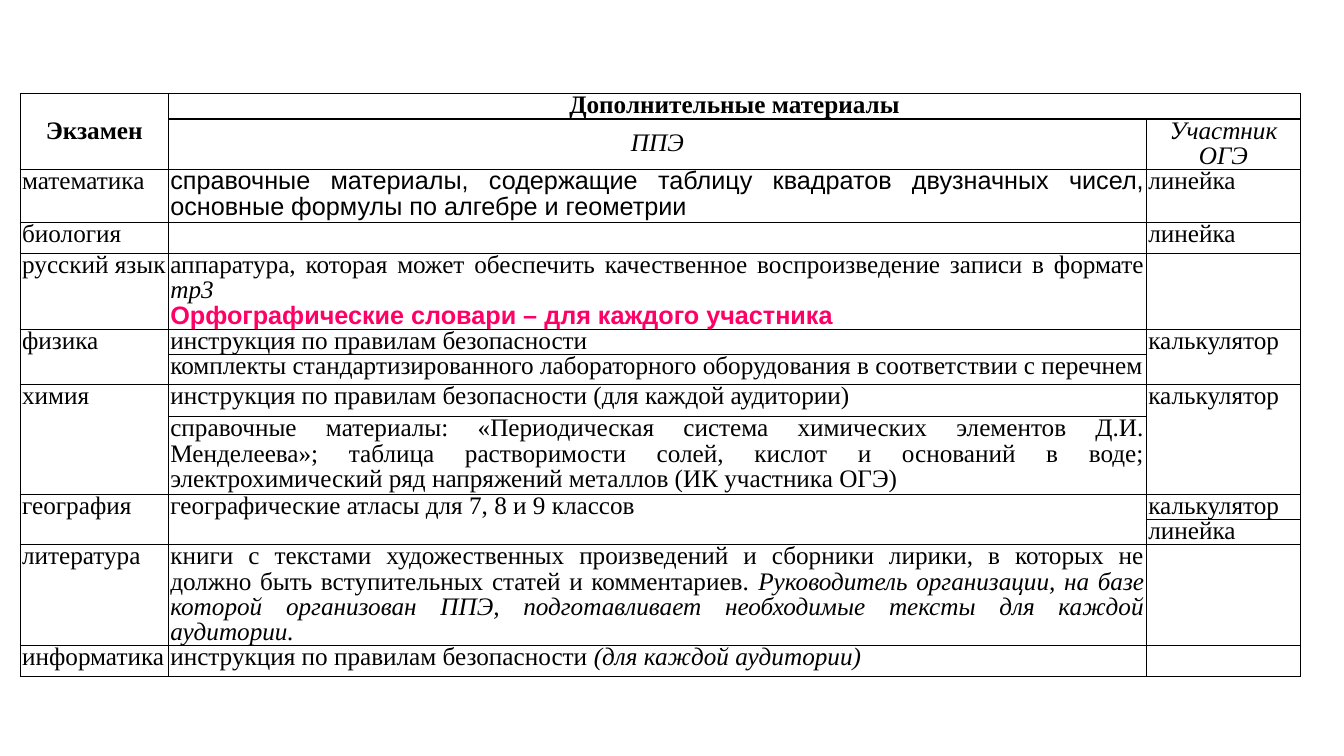
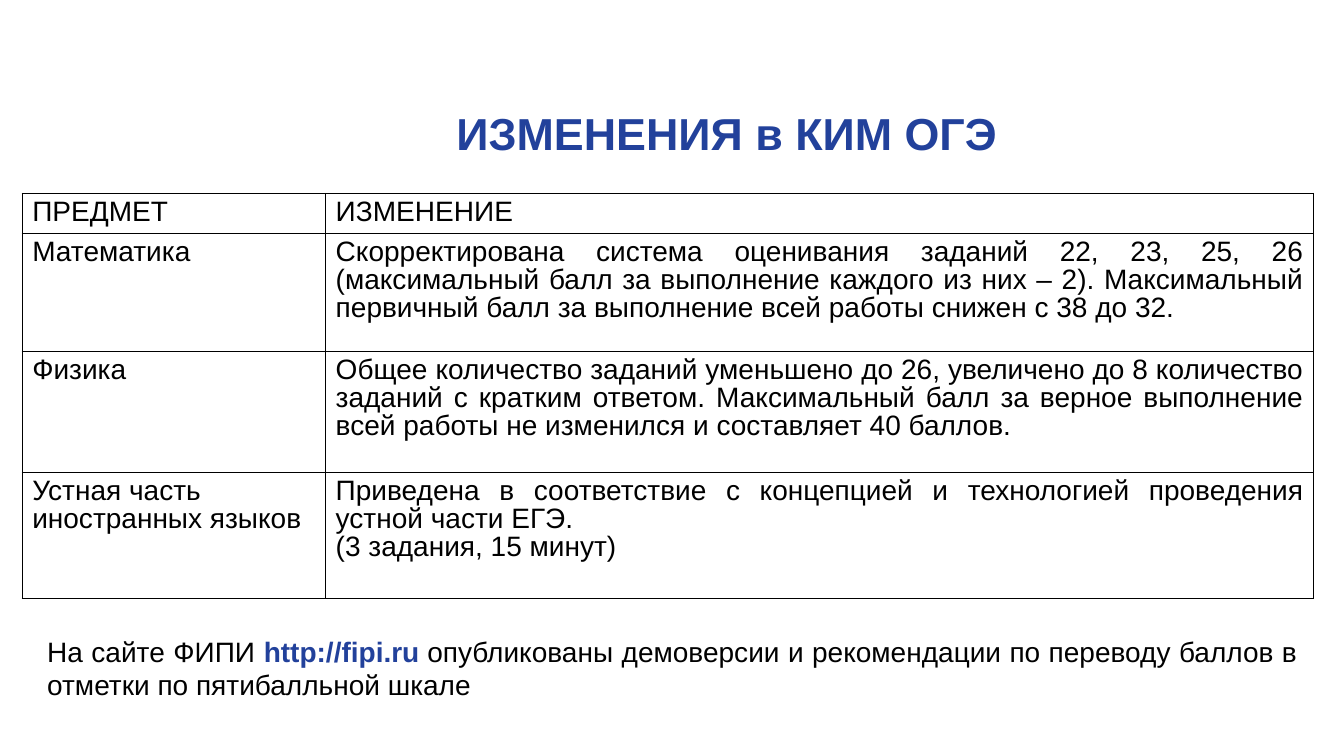
from lxml.etree import SubElement
from pptx import Presentation
from pptx.dml.color import RGBColor
from pptx.enum.text import MSO_ANCHOR, PP_ALIGN
from pptx.oxml.ns import qn
from pptx.util import Inches, Pt

COLORS = {"text": "000000", "accent": "22419B", "alert": "FF0066", "paper": "FFFFFF"}
SERIF = {"name": "Times New Roman", "size": Pt(18)}
SANS = {"name": "Arial", "size": Pt(20)}
TITLE = {"name": "Arial", "size": Pt(32), "bold": True, "color": "accent"}
ITALIC = {"italic": True}
BOLD = {"bold": True}
CENTER, JUSTIFY, LEFT = PP_ALIGN.CENTER, PP_ALIGN.JUSTIFY, PP_ALIGN.LEFT

MATERIALS = [
    ["Экзамен", "Дополнительные материалы", None],
    [None, "ППЭ", "Участник ОГЭ"],
    ["математика",
     [[("справочные материалы, содержащие таблицу квадратов двузначных чисел, "
        "основные формулы по алгебре и геометрии", {"name": "Arial"})]],
     "линейка"],
    ["биология", None, "линейка"],
    ["русский язык",
     [[("аппаратура, которая может обеспечить качественное воспроизведение "
        "записи в формате ", {}), ("mp3", ITALIC)],
      [("Орфографические словари – для каждого участника",
        {"name": "Arial", "bold": True, "color": "alert"})]],
     None],
    ["физика", "инструкция по правилам безопасности", "калькулятор"],
    [None, "комплекты стандартизированного лабораторного оборудования "
           "в соответствии с перечнем", None],
    ["химия", "инструкция по правилам безопасности (для каждой аудитории)",
     "калькулятор"],
    [None, "справочные материалы: «Периодическая система химических элементов "
           "Д.И. Менделеева»; таблица растворимости солей, кислот и оснований "
           "в воде; электрохимический ряд напряжений металлов (ИК участника ОГЭ)",
     None],
    ["география", "географические атласы для 7, 8 и 9 классов", "калькулятор"],
    [None, None, "линейка"],
    ["литература",
     [[("книги с текстами художественных произведений и сборники лирики, "
        "в которых не должно быть вступительных статей и комментариев. ", {}),
       ("Руководитель организации, на базе которой организован ППЭ, "
        "подготавливает необходимые тексты для каждой аудитории.", ITALIC)]],
     None],
    ["информатика",
     [[("инструкция по правилам безопасности", {}),
       (" (для каждой аудитории)", ITALIC)]],
     None],
]
MATERIAL_HEIGHTS = [0.25, 0.5, 0.53, 0.28, 0.75, 0.25, 0.3, 0.32, 0.77,
                    0.25, 0.25, 1, 0.27]
MATERIAL_MERGES = [((0, 0), (1, 0)), ((0, 1), (0, 2)), ((5, 0), (6, 0)),
                   ((5, 2), (6, 2)), ((7, 0), (8, 0)), ((7, 2), (8, 2)),
                   ((9, 0), (10, 0)), ((9, 1), (10, 1))]

CHANGES = [
    ["ПРЕДМЕТ", "ИЗМЕНЕНИЕ"],
    ["Математика",
     "Скорректирована система оценивания заданий 22, 23, 25, 26 (максимальный "
     "балл за выполнение каждого из них – 2). Максимальный первичный балл за "
     "выполнение всей работы снижен с 38 до 32."],
    ["Физика",
     "Общее количество заданий уменьшено до 26, увеличено до 8 количество "
     "заданий с кратким ответом. Максимальный балл за верное выполнение всей "
     "работы не изменился и составляет 40 баллов."],
    ["Устная часть иностранных языков",
     [[("Приведена в соответствие с концепцией и технологией проведения "
        "устной части ЕГЭ.", {})],
      [("(3 задания, 15 минут)", {})]]],
]


def rgb(name):
    """Return the palette colour with this name."""
    return RGBColor.from_string(COLORS[name])


def write_text(frame, content, base, alignment, spacing=1.0):
    """Write a string, or paragraphs of (text, format) runs, into a text frame."""
    if content is None:
        content = [[]]
    elif isinstance(content, str):
        content = [[(content, {})]]
    for index, runs in enumerate(content):
        paragraph = frame.add_paragraph() if index else frame.paragraphs[0]
        paragraph.alignment = alignment
        paragraph.line_spacing = spacing
        for text, changes in runs:
            run = paragraph.add_run()
            run.text = text
            values = {"color": "text", **base, **changes}
            run.font.color.rgb = rgb(values.pop("color"))
            for attribute, value in values.items():
                setattr(run.font, attribute, value)


def add_text(slide, box, content, base, alignment):
    """Add a wrapped, vertically centred text box."""
    frame = slide.shapes.add_textbox(*map(Inches, box)).text_frame
    frame.word_wrap = True
    frame.vertical_anchor = MSO_ANCHOR.MIDDLE
    write_text(frame, content, base, alignment)


def style_cell(cell, margins):
    """Give a cell its margins, white fill and thin black borders."""
    horizontal, vertical = map(Inches, margins)
    cell.margin_left = cell.margin_right = horizontal
    cell.margin_top = cell.margin_bottom = vertical
    properties = cell._tc.get_or_add_tcPr()
    for side in ("a:lnL", "a:lnR", "a:lnT", "a:lnB"):
        line = SubElement(properties, qn(side), w=str(Pt(1)))
        fill = SubElement(line, qn("a:solidFill"))
        SubElement(fill, qn("a:srgbClr"), val=COLORS["text"])
    cell.fill.solid()
    cell.fill.fore_color.rgb = rgb("paper")


def add_grid(slide, position, widths, heights, rows, base, margins, style_of, merges=()):
    """Add a bordered table; style_of gives alignment and font changes by place."""
    size = sum(widths), sum(heights)
    table = slide.shapes.add_table(len(heights), len(widths),
                                   *map(Inches, position + size)).table
    table.first_row = table.horz_banding = False
    for column, width in zip(table.columns, widths):
        column.width = Inches(width)
    for row, height in zip(table.rows, heights):
        row.height = Inches(height)
    for start, end in merges:
        table.cell(*start).merge(table.cell(*end))
    for row, values in enumerate(rows):
        for column, content in enumerate(values):
            cell = table.cell(row, column)
            style_cell(cell, margins)
            alignment, changes = style_of(row, column)
            write_text(cell.text_frame, content, {**base, **changes}, alignment, 0.9)
    return table


def material_style(row, column):
    """Centre the two header rows, bold above italic."""
    if row > 1:
        return JUSTIFY, {}
    return CENTER, BOLD if row == 0 else ITALIC


def change_style(row, column):
    """Justify the descriptions and left-align everything else."""
    return (JUSTIFY if row and column else LEFT), {}


def build_materials(slide):
    """Build the table of materials allowed at each exam."""
    table = add_grid(slide, (0.2, 0.93), (1.47, 9.7, 1.53), MATERIAL_HEIGHTS,
                     MATERIALS, SERIF, (0.02, 0), material_style, MATERIAL_MERGES)
    for place in ((0, 0), (1, 1)):
        table.cell(*place).vertical_anchor = MSO_ANCHOR.MIDDLE


def build_changes(slide):
    """Build the title, table and closing note about exam changes."""
    add_text(slide, (1.47, 0.88, 11.48, 0.87), "ИЗМЕНЕНИЯ в КИМ ОГЭ", TITLE, CENTER)
    add_grid(slide, (0.22, 1.92), (3.01, 9.8), (0.4, 1.17, 1.2, 1.25),
             CHANGES, SANS, (0.1, 0.05), change_style)
    note = [[("На сайте ФИПИ ", {}),
             ("http://fipi.ru", {"bold": True, "color": "accent"}),
             (" ", {"size": Pt(18)}),
             ("опубликованы демоверсии и рекомендации по переводу баллов "
              "в отметки по пятибалльной шкале", {})]]
    add_text(slide, (0.37, 6.19, 12.6, 0.87), note, SANS, JUSTIFY)


def main():
    """Build and save the presentation."""
    presentation = Presentation()
    presentation.slide_width = Inches(13.33)
    presentation.slide_height = Inches(7.5)
    for build in (build_materials, build_changes):
        build(presentation.slides.add_slide(presentation.slide_layouts[6]))
    presentation.save("out.pptx")


if __name__ == "__main__":
    main()
